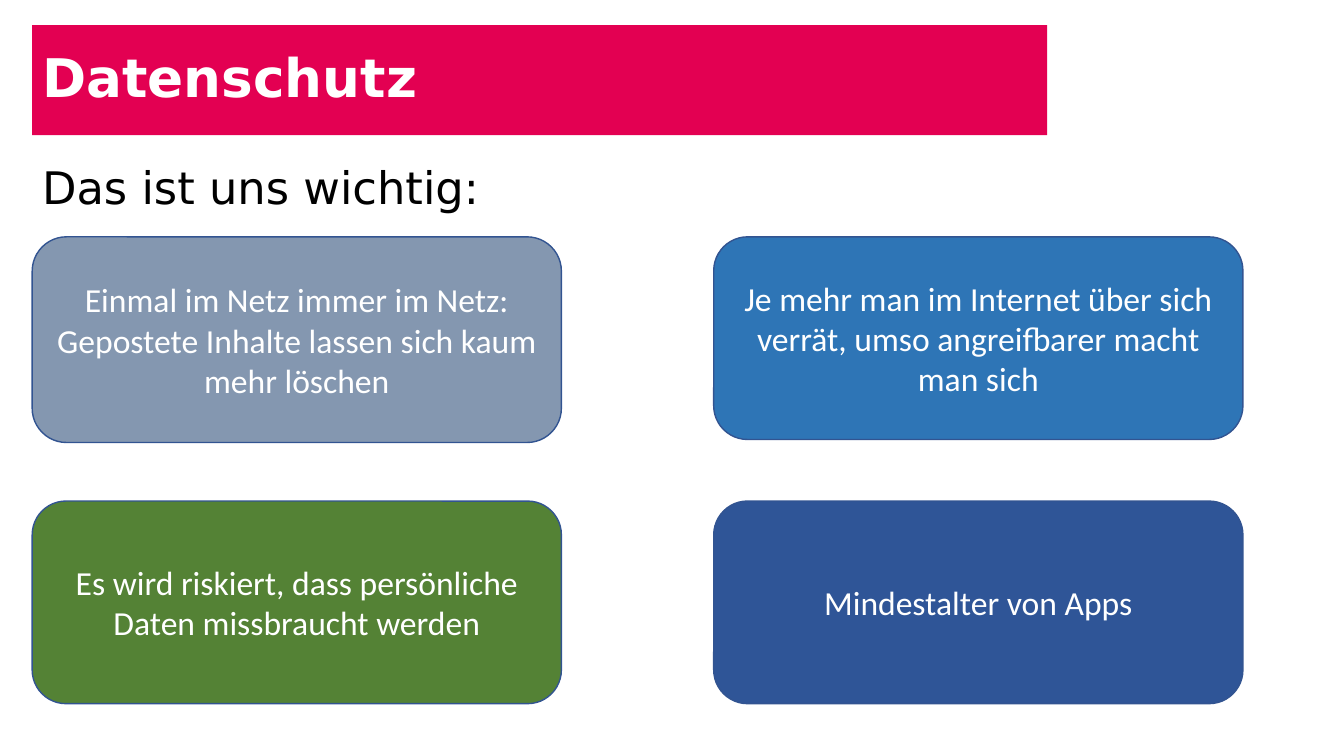
"""Build the Datenschutz slide with four message cards."""
from pptx import Presentation
from pptx import util as u
from pptx.dml.color import RGBColor
from pptx.enum import shapes, text

TITLE = "Datenschutz"
INTRO = "Das ist uns wichtig:"
CARDS = [
    (0, 0, "slate", 146.9, ["Einmal im Netz immer im Netz:",
                            "Gepostete Inhalte lassen sich kaum mehr löschen"]),
    (1, 0, "blue", 144.7, ["Je mehr man im Internet über sich verrät, "
                           "umso angreifbarer macht man sich"]),
    (0, 1, "green", 144.7, ["Es wird riskiert, dass persönliche Daten "
                            "missbraucht werden"]),
    (1, 1, "navy", 144.7, ["Mindestalter von Apps"]),
]
COLORS = {"magenta": "E30052", "slate": "8497B0", "blue": "2E75B6",
          "green": "548235", "navy": "2F5597", "edge": "325491",
          "white": "FFFFFF", "black": "000000"}
HEAD_FONT, CARD_FONT = "DejaVu Sans", "Calibri"
LEFT, CARD_TOP, CARD_W = 23, 169.2, 378
COL_STEP, ROW_STEP = 486.8, 188.7


def rgb(name):
    return RGBColor.from_string(COLORS[name])


def place(sp, left, top, width, height):
    sp.left, sp.top = u.Pt(left), u.Pt(top)
    sp.width, sp.height = u.Pt(width), u.Pt(height)


def write(sp, lines, size, font, color="white", bold=False,
          align=text.PP_ALIGN.LEFT, anchor=text.MSO_ANCHOR.MIDDLE, spacing=1.0):
    tf = sp.text_frame
    tf.word_wrap = True
    tf.auto_size = text.MSO_AUTO_SIZE.NONE
    tf.vertical_anchor = anchor
    for i, line in enumerate(lines):
        p = tf.paragraphs[0] if i == 0 else tf.add_paragraph()
        p.alignment, p.line_spacing = align, spacing
        r = p.add_run()
        r.text = line
        r.font.size, r.font.name, r.font.bold = u.Pt(size), font, bold
        r.font.color.rgb = rgb(color)


def main():
    prs = Presentation()
    prs.slide_width, prs.slide_height = u.Pt(960), u.Pt(540)
    s = prs.slides.add_slide(prs.slide_layouts[5])

    title = s.shapes.title
    place(title, LEFT, 18, 725, 78.5)
    title.fill.solid()
    title.fill.fore_color.rgb = rgb("magenta")
    write(title, [TITLE], 38, HEAD_FONT, bold=True, spacing=0.9)

    intro = s.shapes.add_textbox(u.Pt(LEFT), u.Pt(115.2), u.Pt(909), u.Pt(48))
    write(intro, [INTRO], 32, HEAD_FONT, color="black",
          anchor=text.MSO_ANCHOR.TOP, spacing=0.9)

    for col, row, color, height, lines in CARDS:
        card = s.shapes.add_shape(
            shapes.MSO_SHAPE.ROUNDED_RECTANGLE,
            u.Pt(LEFT + col * COL_STEP), u.Pt(CARD_TOP + row * ROW_STEP),
            u.Pt(CARD_W), u.Pt(height))
        card.shadow.inherit = False
        card.fill.solid()
        card.fill.fore_color.rgb = rgb(color)
        card.line.color.rgb = rgb("edge")
        card.line.width = u.Pt(1)
        write(card, lines, 24, CARD_FONT, align=text.PP_ALIGN.CENTER)

    prs.save("out.pptx")


if __name__ == "__main__":
    main()
